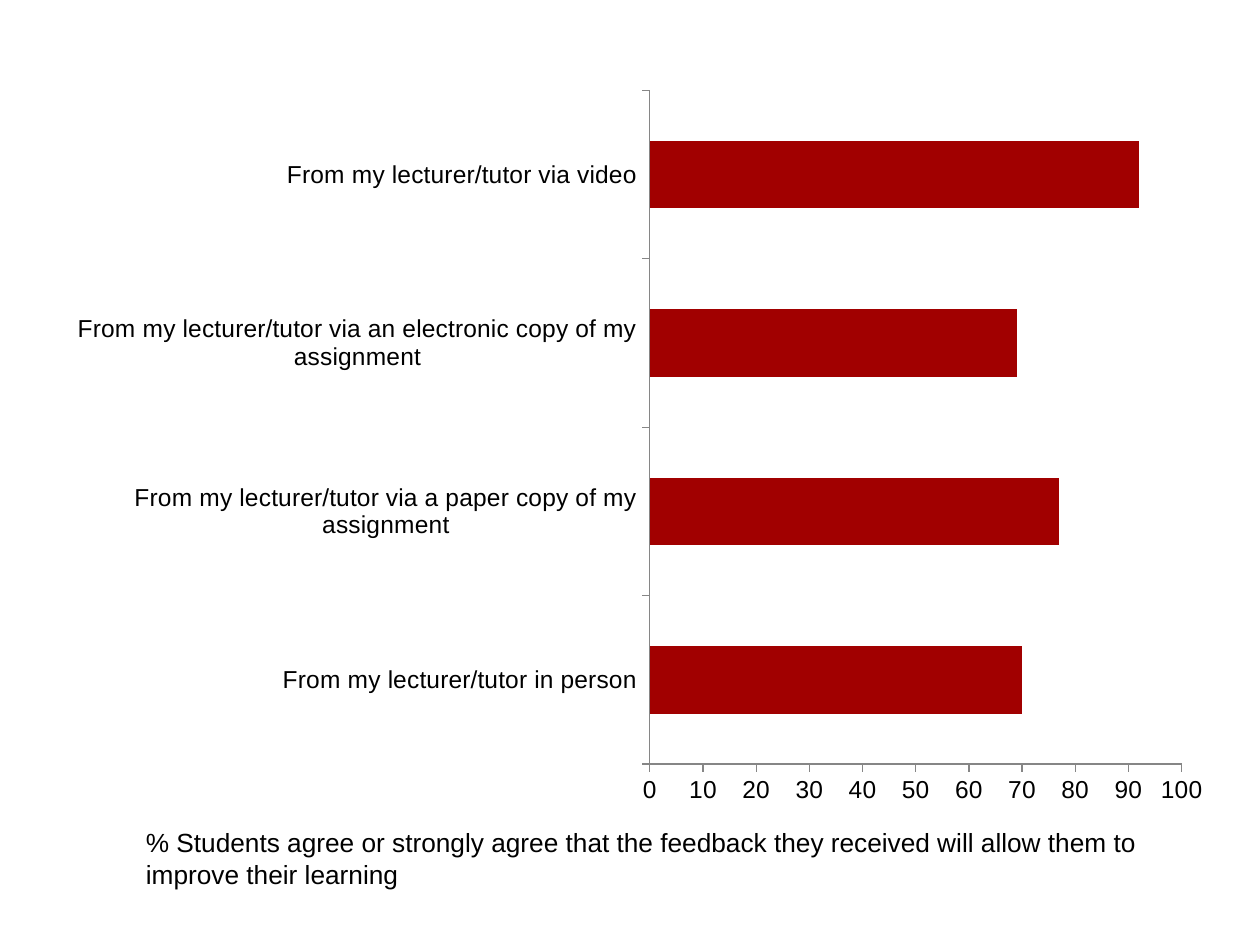
from pptx import Presentation
from pptx.chart.data import CategoryChartData
from pptx.dml.color import RGBColor
from pptx.enum.chart import XL_CHART_TYPE, XL_TICK_MARK
from pptx.util import Inches, Pt

THEME = {
    "font": "Arial",
    "text": RGBColor(0x00, 0x00, 0x00),
    "bar": RGBColor(0xA1, 0x00, 0x00),
    "axis": RGBColor(0x86, 0x86, 0x86),
    "chart_size": Pt(14),
    "caption_size": Pt(15),
}

AGREEMENT = {
    "From my lecturer/tutor in person": 70,
    "From my lecturer/tutor via a paper copy of my assignment": 77,
    "From my lecturer/tutor via an electronic copy of my assignment": 69,
    "From my lecturer/tutor via video": 92,
}


def format_font(font, size):
    for name, value in {"name": THEME["font"], "size": size}.items():
        setattr(font, name, value)
    font.color.rgb = THEME["text"]


presentation = Presentation()
presentation.slide_width = Inches(10)
presentation.slide_height = Inches(7.5)
slide = presentation.slides.add_slide(presentation.slide_layouts[6])

# Bar chart
chart_data = CategoryChartData()
chart_data.categories = list(AGREEMENT)
chart_data.add_series("Series 1", list(AGREEMENT.values()))
chart = slide.shapes.add_chart(
    XL_CHART_TYPE.BAR_CLUSTERED,
    Inches(0.43), Inches(0.6), Inches(9.3), Inches(5.9), chart_data,
).chart
chart.has_legend = False
chart.has_title = False
format_font(chart.font, THEME["chart_size"])

plot = chart.plots[0]
plot.gap_width = 150
plot.vary_by_categories = False
bar_fill = plot.series[0].format.fill
bar_fill.solid()
bar_fill.fore_color.rgb = THEME["bar"]

for axis in (chart.category_axis, chart.value_axis):
    axis.has_major_gridlines = False
    axis.major_tick_mark = XL_TICK_MARK.OUTSIDE
    axis.format.line.color.rgb = THEME["axis"]
    axis.format.line.width = Pt(0.75)

value_axis = chart.value_axis
for name, value in {"minimum_scale": 0, "maximum_scale": 100, "major_unit": 10}.items():
    setattr(value_axis, name, value)

# Caption
caption = slide.shapes.add_textbox(Inches(1.06), Inches(6.51), Inches(8.43), Inches(0.61))
caption.text_frame.word_wrap = True
paragraph = caption.text_frame.paragraphs[0]
paragraph.text = (
    "% Students agree or strongly agree that the feedback they received "
    "will allow them to improve their learning"
)
format_font(paragraph.font, THEME["caption_size"])

presentation.save("out.pptx")
